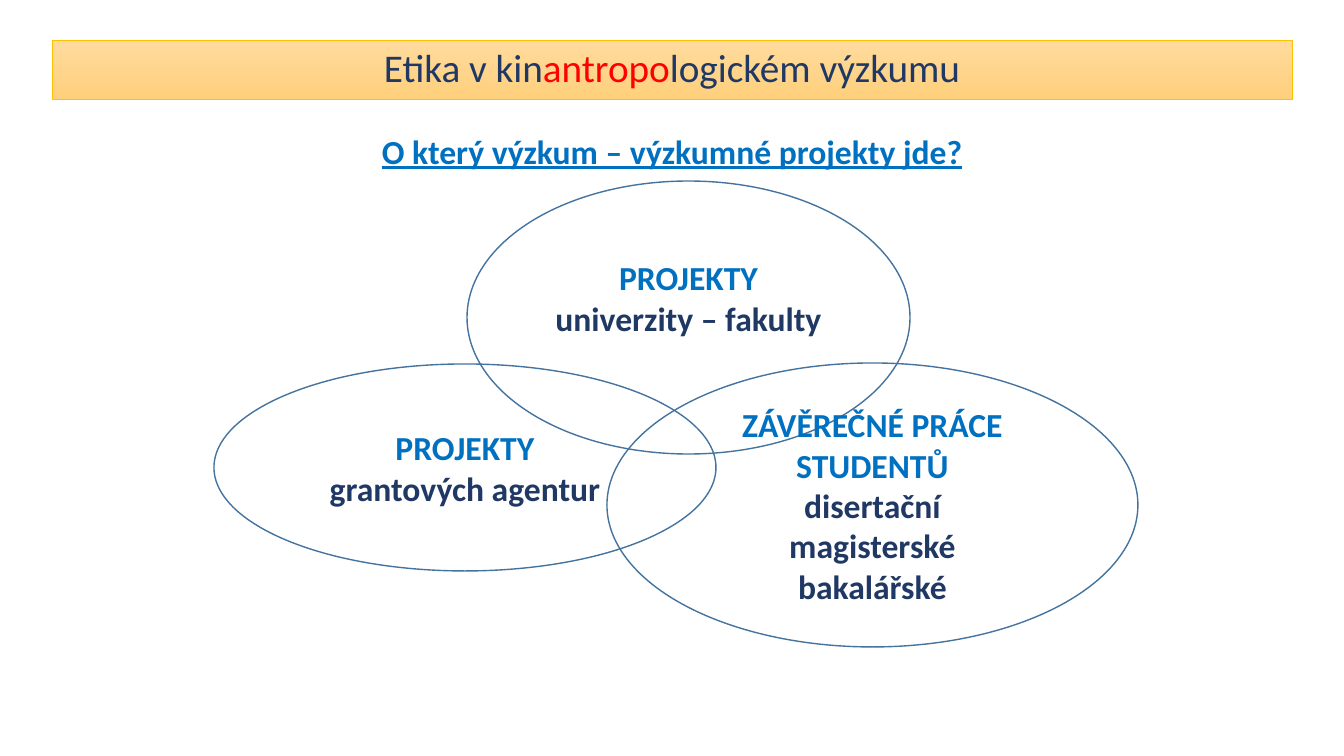
"""Builds a slide on research ethics with three overlapping project ellipses."""
from dataclasses import dataclass

from lxml.etree import SubElement
from pptx import Presentation
from pptx.dml.color import RGBColor
from pptx.enum.shapes import MSO_SHAPE
from pptx.enum.text import MSO_ANCHOR, MSO_AUTO_SIZE, PP_ALIGN
from pptx.oxml.ns import qn
from pptx.util import Emu, Pt

TITLE_PARTS = [("Etika v kin", "navy"), ("antropo", "red"), ("logickém výzkumu", "navy")]
QUESTION = "O který výzkum – výzkumné projekty jde?"
TITLE_BOX = (52, 40, 1240, 59)
QUESTION_BOX = (52, 130, 1240, 51)
PROJECT_GROUPS = [
    {"box": (214, 364, 502, 207), "bottom_inset": 5,
     "heading": "PROJEKTY", "details": ["grantových agentur"]},
    {"box": (467, 181, 443, 273), "bottom_inset": 45,
     "heading": "PROJEKTY", "details": ["univerzity – fakulty"]},
    {"box": (607, 363, 531, 284), "bottom_inset": 5,
     "heading": "ZÁVĚREČNÉ PRÁCE STUDENTŮ",
     "details": ["disertační", "magisterské", "bakalářské"]},
]
SLIDE_SIZE = (1344, 756)
PX_PER_INCH = 100.8


@dataclass(frozen=True)
class Theme:
    font: str = "Calibri"
    navy: str = "203864"
    red: str = "FF0000"
    blue: str = "0070C0"
    outline: str = "43739E"
    title_line: str = "FFC000"
    title_gradient: tuple = ("FFDB9E", "FFD07C")
    title_size: int = 28
    body_size: int = 24


THEME = Theme()


def px(length):
    return Emu(round(length * 914400 / PX_PER_INCH))


def place(part, box):
    part.left, part.top, part.width, part.height = map(px, box)


def style(run, size, color, bold=False):
    run.font.name = THEME.font
    run.font.size = Pt(size)
    run.font.bold = bold
    run.font.color.rgb = RGBColor.from_string(color)


def outline(part, color, width):
    part.line.color.rgb = RGBColor.from_string(color)
    part.line.width = Pt(width)


def prepare(frame, anchor):
    frame.word_wrap = True
    frame.auto_size = MSO_AUTO_SIZE.NONE
    frame.vertical_anchor = anchor


def fill_title(title):
    place(title, TITLE_BOX)
    title.fill.gradient()
    title.fill.gradient_angle = 270
    for stop, color in zip(title.fill.gradient_stops, THEME.title_gradient):
        stop.color.rgb = RGBColor.from_string(color)
    outline(title, THEME.title_line, 0.5)
    prepare(title.text_frame, MSO_ANCHOR.MIDDLE)
    heading = title.text_frame.paragraphs[0]
    heading.alignment = PP_ALIGN.CENTER
    heading.line_spacing = 0.9
    for words, color in TITLE_PARTS:
        run = heading.add_run()
        run.text = words
        style(run, THEME.title_size, getattr(THEME, color))


def fill_question(body):
    place(body, QUESTION_BOX)
    prepare(body.text_frame, MSO_ANCHOR.TOP)
    body.text_frame.text = QUESTION
    question = body.text_frame.paragraphs[0]
    properties = question._p.get_or_add_pPr()
    properties.set("marL", "0")
    properties.set("indent", "0")
    SubElement(properties, qn("a:buNone"))
    question.alignment = PP_ALIGN.CENTER
    question.line_spacing = 0.9
    question.space_before = Pt(0)
    style(question.runs[0], THEME.body_size, THEME.blue, bold=True)
    question.runs[0].font.underline = True


def add_group(slide, group):
    ellipse = slide.shapes.add_shape(MSO_SHAPE.OVAL, *map(px, group["box"]))
    ellipse.shadow.inherit = False
    ellipse.fill.background()
    outline(ellipse, THEME.outline, 1)
    frame = ellipse.text_frame
    prepare(frame, MSO_ANCHOR.MIDDLE)
    frame.margin_top = px(5)
    frame.margin_bottom = px(group["bottom_inset"])
    frame.text = "\n".join([group["heading"], *group["details"]])
    for index, entry in enumerate(frame.paragraphs):
        entry.alignment = PP_ALIGN.CENTER
        color = THEME.navy if index else THEME.blue
        style(entry.runs[0], THEME.body_size, color, bold=True)


def main():
    deck = Presentation()
    deck.slide_width, deck.slide_height = map(px, SLIDE_SIZE)
    slide = deck.slides.add_slide(deck.slide_layouts[1])
    fill_title(slide.shapes.title)
    fill_question(slide.placeholders[1])
    for group in PROJECT_GROUPS:
        add_group(slide, group)
    deck.save("out.pptx")


if __name__ == "__main__":
    main()
